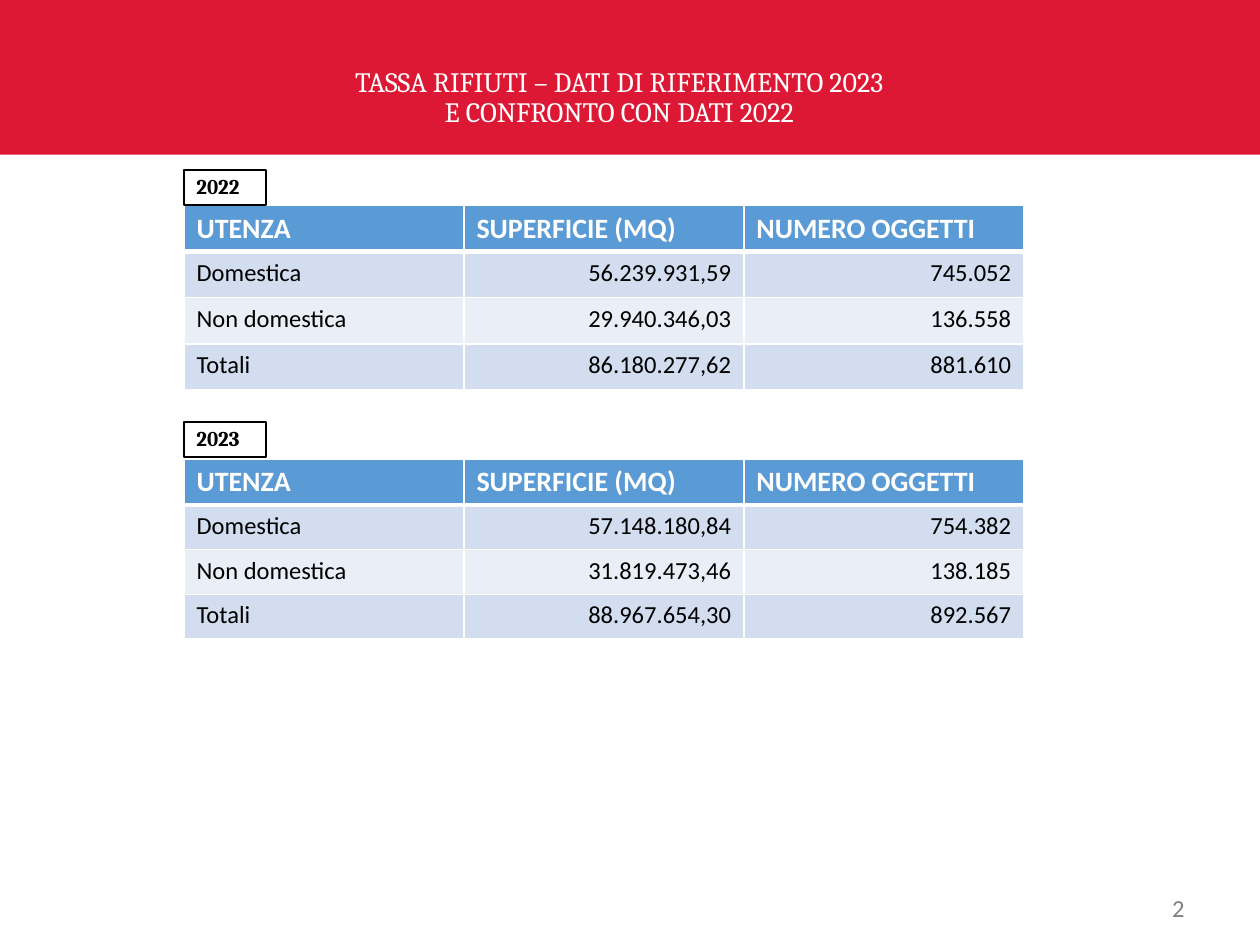
from dataclasses import dataclass

from lxml import etree
from pptx import Presentation
from pptx.dml.color import RGBColor
from pptx.enum.shapes import MSO_SHAPE
from pptx.enum.text import MSO_ANCHOR, PP_ALIGN
from pptx.oxml.ns import qn
from pptx.util import Cm, Pt

RECT = MSO_SHAPE.RECTANGLE
LEFT, MID, RIGHT = PP_ALIGN.LEFT, PP_ALIGN.CENTER, PP_ALIGN.RIGHT
CENTER, BOTTOM = MSO_ANCHOR.MIDDLE, MSO_ANCHOR.BOTTOM


@dataclass(frozen=True)
class Theme:
    red: str = "DD1835"
    blue: str = "5B9BD5"
    bands: tuple = ("D2DEEF", "EAEFF7")
    white: str = "FFFFFF"
    black: str = "000000"
    gray: str = "808080"
    serif: str = "Cambria"
    sans: str = "Calibri"
    head: int = 16
    body: int = 14
    tag: int = 12


THEME = Theme()
HEADS = ("UTENZA", "SUPERFICIE (MQ)", "NUMERO OGGETTI")
YEARS = (
    # year, top, row height, gap under the tag, rows
    ("2022", 3.43, 0.93, 0, (
        ("Domestica", "56.239.931,59", "745.052"),
        ("Non domestica", "29.940.346,03", "136.558"),
        ("Totali", "86.180.277,62", "881.610"))),
    ("2023", 8.51, 0.9, 0.03, (
        ("Domestica", "57.148.180,84", "754.382"),
        ("Non domestica", "31.819.473,46", "138.185"),
        ("Totali", "88.967.654,30", "892.567"))),
)


def write(frame, text, size=THEME.body, color=THEME.black, font=THEME.sans,
          bold=False, align=LEFT, lead=None):
    """Put text into a frame, with a line break at each newline."""
    para = frame.paragraphs[0]
    para.alignment = align
    if lead:
        para.line_spacing = lead
    for i, line in enumerate(text.split("\n")):
        if i:
            para.add_line_break()
        run = para.add_run()
        run.text = line
        run.font.name = font
        run.font.size = Pt(size)
        run.font.bold = bold
        run.font.color.rgb = RGBColor.from_string(color)


def add_rect(slide, box, fill, line=None):
    shape = slide.shapes.add_shape(RECT, *map(Cm, box))
    shape.shadow.inherit = False
    shape.fill.solid()
    shape.fill.fore_color.rgb = RGBColor.from_string(fill)
    if line:
        shape.line.color.rgb = RGBColor.from_string(line)
        shape.line.width = Pt(1)
    else:
        shape.line.fill.background()
    return shape


def add_text(slide, box, text, anchor=CENTER, **style):
    frame = slide.shapes.add_textbox(*map(Cm, box)).text_frame
    frame.word_wrap = True
    frame.vertical_anchor = anchor
    write(frame, text, **style)


def edge_cell(cell, base):
    """Draw white cell borders; they must precede the cell's fill."""
    props = cell._tc.get_or_add_tcPr()
    for side, width in (("L", 1), ("R", 1), ("T", 1), ("B", base)):
        line = etree.SubElement(props, qn(f"a:ln{side}"), w=str(Pt(width)))
        fill = etree.SubElement(line, qn("a:solidFill"))
        etree.SubElement(fill, qn("a:srgbClr"), val=THEME.white)


def add_banner(slide, box):
    left, top, width, height = box
    add_rect(slide, box, THEME.red)
    add_text(slide, (left + 4.09, top + 1.17, width - 8.61, height - 1.57),
             "TASSA RIFIUTI – DATI DI RIFERIMENTO 2023\n"
             "E CONFRONTO CON DATI 2022",
             anchor=BOTTOM, size=THEME.head, color=THEME.white,
             font=THEME.serif, align=MID, lead=0.9)


def add_grid(slide, box, rows):
    data = (HEADS, *rows)
    grid = slide.shapes.add_table(len(data), len(HEADS),
                                  *map(Cm, box)).table
    for col in grid.columns:
        col.width = Cm(box[2] / len(HEADS))
    for r, row in enumerate(data):
        grid.rows[r].height = Cm(box[3] / len(data))
        for c, text in enumerate(row):
            cell = grid.cell(r, c)
            edge_cell(cell, 1 if r else 3)
            cell.fill.solid()
            fill = THEME.bands[(r - 1) % 2] if r else THEME.blue
            cell.fill.fore_color.rgb = RGBColor.from_string(fill)
            if r:
                write(cell.text_frame, text, align=RIGHT if c else LEFT)
            else:
                write(cell.text_frame, text, size=THEME.head,
                      color=THEME.white, bold=True)


def add_year(slide, box, year, gap, rows):
    """Place a year tag with its table below."""
    left, top, width, height = box
    tag = 0.71
    add_grid(slide, (left, top + tag + gap, width, height), rows)
    label = add_rect(slide, (left, top, 1.65, tag), THEME.white, THEME.black)
    label.text_frame.vertical_anchor = CENTER
    write(label.text_frame, year, size=THEME.tag, font=THEME.serif,
          bold=True, lead=0.9)


def main():
    deck = Presentation()
    deck.slide_width, deck.slide_height = Cm(25.4), Cm(19.05)
    slide = deck.slides.add_slide(deck.slide_layouts[6])

    # Title band
    add_banner(slide, (0, 0, 25.4, 3.12))

    # One table for each year
    for year, top, step, gap, rows in YEARS:
        box = (3.71, top, 16.93, step * (len(rows) + 1))
        add_year(slide, box, year, gap, rows)

    # Page number
    add_text(slide, (18.21, 17.93, 5.92, 0.74), "2", color=THEME.gray,
             align=RIGHT)

    deck.save("out.pptx")


if __name__ == "__main__":
    main()
